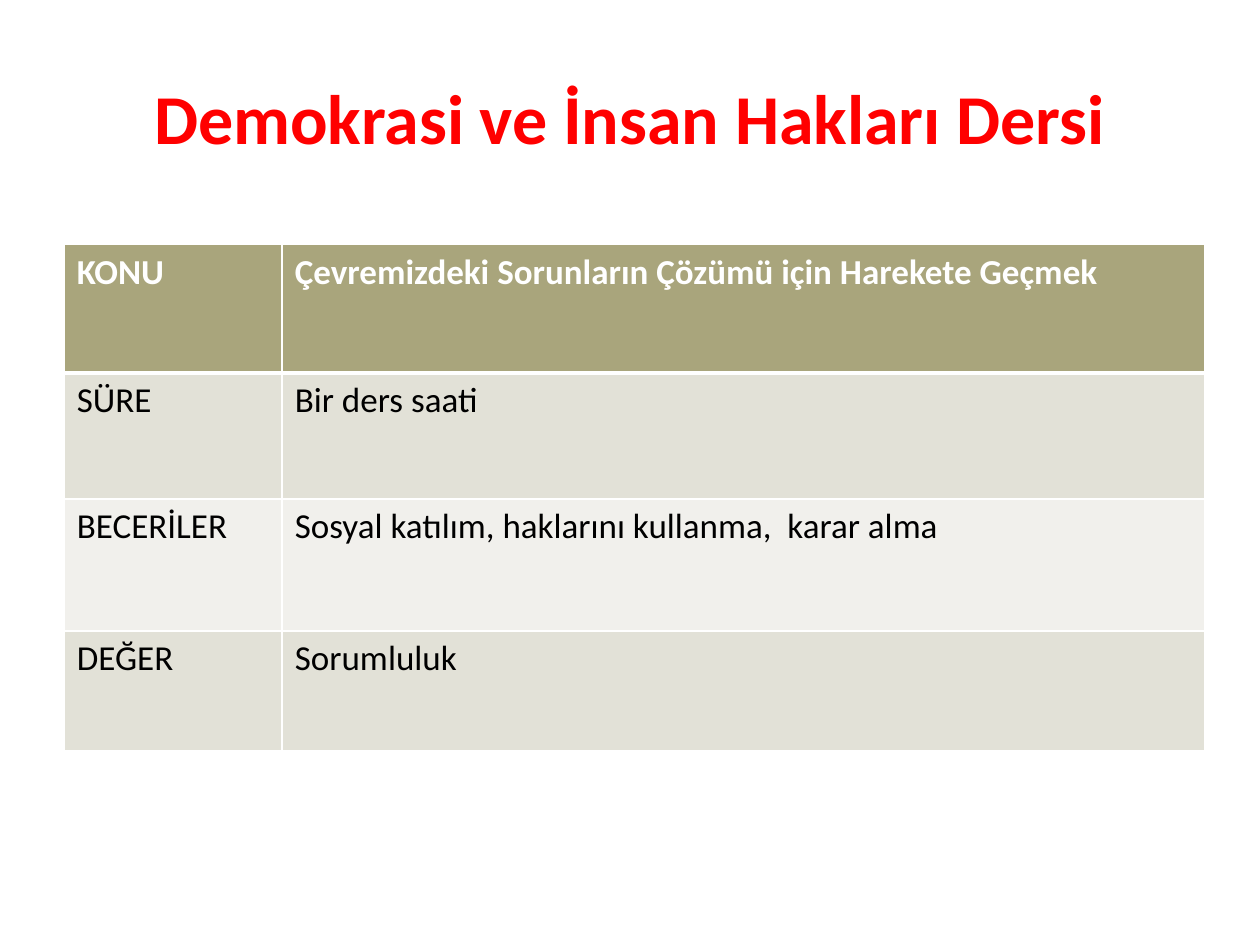
from dataclasses import dataclass

from lxml.etree import SubElement
from pptx import Presentation
from pptx.dml.color import RGBColor
from pptx.enum.text import MSO_ANCHOR, PP_ALIGN
from pptx.oxml.ns import qn
from pptx.util import Inches, Pt


@dataclass(frozen=True)
class Theme:
    font: str = "Calibri"
    title_size: int = 40
    table_size: int = 20
    title_color: str = "FF0000"
    text_color: str = "000000"
    header_text: str = "FFFFFF"
    header_fill: str = "A9A57C"
    band_fills: tuple = ("E2E1D7", "F1F0EC")
    border_color: str = "FFFFFF"
    border_width: int = 1
    header_border_width: int = 3


class SlideBuilder:
    def __init__(self, slide, theme):
        self.slide = slide
        self.theme = theme

    def add_run(self, paragraph, text, size, color, bold=False):
        run = paragraph.add_run()
        run.text = text
        run.font.name = self.theme.font
        run.font.size = Pt(size)
        run.font.bold = bold
        run.font.color.rgb = RGBColor.from_string(color)

    def add_title(self, text, left, top, width, height):
        box = self.slide.shapes.add_textbox(
            Inches(left), Inches(top), Inches(width), Inches(height))
        frame = box.text_frame
        frame.word_wrap = True
        frame.vertical_anchor = MSO_ANCHOR.MIDDLE
        paragraph = frame.paragraphs[0]
        paragraph.alignment = PP_ALIGN.CENTER
        self.add_run(paragraph, text, self.theme.title_size,
                     self.theme.title_color, bold=True)

    def set_borders(self, cell, top, bottom):
        properties = cell._tc.get_or_add_tcPr()
        side = self.theme.border_width
        for tag, width in (("lnL", side), ("lnR", side),
                           ("lnT", top), ("lnB", bottom)):
            line = SubElement(properties, qn(f"a:{tag}"), w=str(Pt(width)))
            fill = SubElement(line, qn("a:solidFill"))
            SubElement(fill, qn("a:srgbClr"), val=self.theme.border_color)

    def add_table(self, rows, left, top, column_widths, row_heights):
        theme = self.theme
        table = self.slide.shapes.add_table(
            len(rows), len(column_widths), Inches(left), Inches(top),
            Inches(sum(column_widths)), Inches(sum(row_heights))).table
        for column, width in zip(table.columns, column_widths):
            column.width = Inches(width)
        for row, height in zip(table.rows, row_heights):
            row.height = Inches(height)

        for row_index, texts in enumerate(rows):
            header = row_index == 0
            fill = theme.header_fill if header else theme.band_fills[(row_index - 1) % 2]
            color = theme.header_text if header else theme.text_color
            # The heavy rule runs between the header and the first body row
            above = theme.header_border_width if row_index == 1 else theme.border_width
            below = theme.header_border_width if header else theme.border_width
            for column_index, text in enumerate(texts):
                cell = table.cell(row_index, column_index)
                self.set_borders(cell, above, below)
                cell.fill.solid()
                cell.fill.fore_color.rgb = RGBColor.from_string(fill)
                self.add_run(cell.text_frame.paragraphs[0], text,
                             theme.table_size, color, bold=header)


def main():
    presentation = Presentation()
    presentation.slide_width = Inches(10)
    presentation.slide_height = Inches(7.5)
    slide = presentation.slides.add_slide(presentation.slide_layouts[6])
    builder = SlideBuilder(slide, Theme())

    # Title
    builder.add_title("Demokrasi ve İnsan Hakları Dersi", 0.5, 0.3, 9, 1.25)

    # Lesson plan table
    lesson_rows = [
        ("KONU", "Çevremizdeki Sorunların Çözümü için Harekete Geçmek"),
        ("SÜRE", "Bir ders saati"),
        ("BECERİLER", "Sosyal katılım, haklarını kullanma,  karar alma"),
        ("DEĞER", "Sorumluluk"),
    ]
    builder.add_table(lesson_rows, 0.51, 1.94,
                      column_widths=(1.73, 7.32),
                      row_heights=(1.02, 1, 1.05, 0.95))

    presentation.save("out.pptx")


if __name__ == "__main__":
    main()
